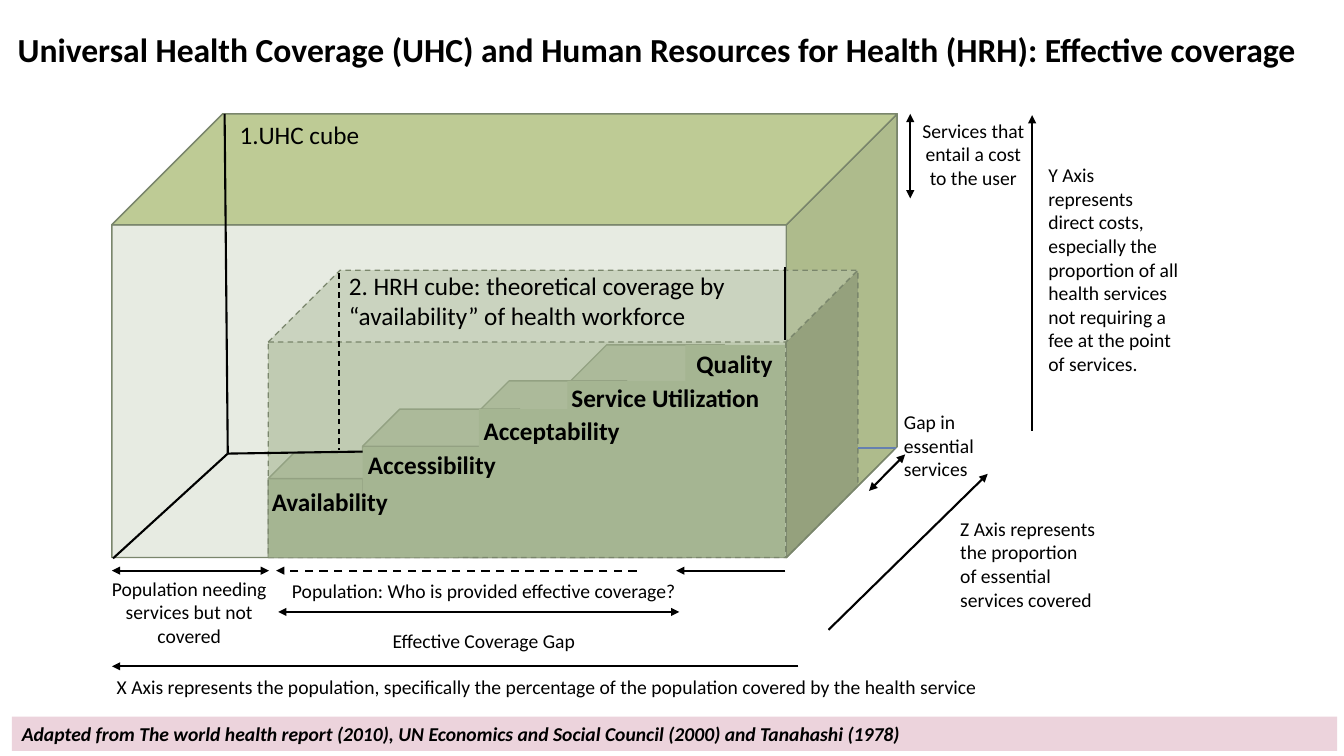
from dataclasses import dataclass

from lxml.etree import SubElement
from pptx import Presentation
from pptx.dml.color import RGBColor
from pptx.enum.dml import MSO_LINE_DASH_STYLE as DASH
from pptx.enum.shapes import MSO_CONNECTOR, MSO_SHAPE
from pptx.enum.text import MSO_ANCHOR, MSO_AUTO_SIZE, PP_ALIGN
from pptx.oxml.ns import qn
from pptx.util import Cm, Pt


@dataclass(frozen=True)
class Theme:
    font: str = "Calibri"
    title: int = 24
    label: int = 18
    note: int = 14
    ink: str = "000000"
    sage: str = "A5B592"
    lime: str = "BECB95"
    edge: str = "7A866C"
    floor: str = "6580B0"
    footer: str = "ECD3DC"


T = Theme()


def rgb(code):
    return RGBColor.from_string(code)


def write(tf, text, size, bold=False, italic=False, align=PP_ALIGN.LEFT):
    tf.text = text
    p = tf.paragraphs[0]
    p.alignment = align
    p.font.name, p.font.size = T.font, Pt(size)
    p.font.bold, p.font.italic = bold, italic
    p.font.color.rgb = rgb(T.ink)
    return p


def add_text(s, box, at, text, size=T.note, wrap=True, **style):
    """Place text at (left, top, width, height), measured from the box corner."""
    x, y, w, h = at
    tb = s.shapes.add_textbox(Cm(box[0] + x), Cm(box[1] + y), Cm(w), Cm(h))
    tb.text_frame.word_wrap = wrap
    write(tb.text_frame, text, size, **style)


def paint(sp, fill, edge=None, alpha=None, dash=None):
    sp.shadow.inherit = False
    sp.fill.solid()
    sp.fill.fore_color.rgb = rgb(fill)
    if alpha:
        color = sp.fill._xPr.find(qn("a:solidFill"))[0]
        SubElement(color, qn("a:alpha")).set("val", str(alpha * 1000))
    if edge:
        sp.line.color.rgb = rgb(edge)
        sp.line.width = Pt(1)
        sp.line.dash_style = dash
    else:
        sp.line.fill.background()


def add_block(s, box, kind, at, fill=T.sage, **look):
    x, y, w, h = at
    sp = s.shapes.add_shape(kind, Cm(box[0] + x), Cm(box[1] + y), Cm(w), Cm(h))
    paint(sp, fill, **look)
    return sp


def add_face(s, box, points):
    pts = [(Cm(box[0] + x), Cm(box[1] + y)) for x, y in points]
    fb = s.shapes.build_freeform(*pts[0])
    fb.add_line_segments(pts[1:], close=True)
    paint(fb.convert_to_shape(), T.lime, T.edge)


def add_line(s, box, start, end, heads="", color=T.ink, width=1.5, dash=None):
    """Draw a line; heads holds "<" for an arrowhead at start, ">" at end."""
    ends = [Cm(box[i % 2] + v) for i, v in enumerate((*start, *end))]
    ln = s.shapes.add_connector(MSO_CONNECTOR.STRAIGHT, *ends)
    ln.line.color.rgb = rgb(color)
    ln.line.width = Pt(width)
    ln.line.dash_style = dash
    xml = ln.line._get_or_add_ln()
    for mark, tag in (("<", "a:headEnd"), (">", "a:tailEnd")):
        if mark in heads:
            SubElement(xml, qn(tag)).set("type", "triangle")
    SubElement(ln._element.spPr, qn("a:effectLst"))


def title(s, box):
    sp = s.shapes.title
    sp.left, sp.top, sp.width, sp.height = (Cm(v) for v in box)
    tf = sp.text_frame
    tf.word_wrap, tf.auto_size = True, MSO_AUTO_SIZE.NONE
    tf.vertical_anchor = MSO_ANCHOR.MIDDLE
    p = write(tf, "Universal Health Coverage (UHC) and Human Resources for Health "
              "(HRH): Effective coverage", T.title, bold=True)
    p.line_spacing = 0.9


def coverage_cubes(s, box):
    """UHC cube holding the HRH cube and its staircase of coverage steps."""
    _, _, w, h = box
    d = h / 4
    cube, rect = MSO_SHAPE.CUBE, MSO_SHAPE.RECTANGLE

    add_face(s, box, [(w - d, d), (w - d, h), (w, h - d), (w, 0)])
    add_block(s, box, cube, (0, 0, w, h), edge=T.edge, alpha=26)
    for x, y, step_w in ((11.48, 5.82, 3.96), (9.02, 6.73, 3.96),
                         (6.32, 7.44, 3.96), (3.94, 8.53, 3.05)):
        add_block(s, box, cube, (x, y, step_w, h - y), edge=T.edge)

    def cover(x, y, cover_w):
        add_block(s, box, rect, (x, y, cover_w, h - y))

    for strip in ((14.45, 5.82, 2.51), (11.48, 6.73, 3.1), (9.25, 7.44, 2.41)):
        cover(*strip)
    add_block(s, box, cube, (3.94, 3.94, 14.86, h - 3.94), edge=T.edge,
              alpha=59, dash=DASH.DASH)
    for strip in ((6.32, 8.41, 2.41), (3.96, 9.8, 2.64)):
        cover(*strip)
    add_face(s, box, [(d, 0), (w, 0), (w - d, d), (0, d)])

    corner = (2.92, 8.56)
    add_line(s, box, (2.84, 0), corner)
    add_line(s, box, corner, (0.03, 11.2))
    add_line(s, box, corner, (6.32, 8.51))
    add_line(s, box, (18.8, 8.41), (19.76, 8.41), color=T.floor)
    add_line(s, box, (16.97, 3.86), (16.97, 5.69))
    add_line(s, box, (5.72, 4.01), (5.72, 8.48), width=1, dash=DASH.DASH)

    add_text(s, box, (2.97, 0, 3.58, 1.02), "1.UHC cube", T.label, wrap=False)
    add_text(s, box, (5.72, 3.81, 10.54, 1.8), "2. HRH cube: theoretical coverage "
             "by “availability” of health workforce", T.label)
    for text, x, y, text_w in (("Quality", 14.48, 5.79, 2.44),
                               ("Service Utilization", 11.33, 6.65, 5.28),
                               ("Acceptability", 9.12, 7.47, 3.96),
                               ("Accessibility", 6.2, 8.33, 3.76),
                               ("Availability", 3.78, 9.27, 3.45)):
        add_text(s, box, (x, y, text_w, 1.02), text, T.label, wrap=False, bold=True)


def x_axis(s, box):
    w, h = box[2:]
    add_line(s, box, (0, 0), (3.96, 0), "<>")
    add_line(s, box, (4.19, 1.04), (14.3, 1.04), "<>")
    add_line(s, box, (13.23, 0), (4.14, 0), ">", dash=DASH.DASH)
    add_line(s, box, (16.97, 0), (14.22, 0), ">")
    add_line(s, box, (w, h), (0, h), ">")
    for text, at in (
            ("Population needing services but not covered", (-0.36, 0.03, 4.62, 2.06)),
            ("Population: Who is provided effective coverage?", (3.51, 0.08, 11.73, 0.86)),
            ("Effective Coverage Gap", (3.51, 1.35, 11.73, 0.86)),
            ("X Axis represents the population, specifically the percentage of the "
             "population covered by the health service", (-0.79, 2.51, 23.52, 0.86))):
        add_text(s, box, at, text, align=PP_ALIGN.CENTER)


def y_axis(s, box):
    h = box[3]
    add_line(s, box, (0, 0), (0, 2.13), "<>")
    add_line(s, box, (3.07, h), (3.07, 0.03), ">")
    add_text(s, box, (-0.05, 0, 3.28, 2.06), "Services that entail a cost to the user",
             align=PP_ALIGN.CENTER)
    add_text(s, box, (3.23, 1.12, 3.91, 5.64), "Y Axis represents direct costs, "
             "especially the proportion of all health services not requiring a fee "
             "at the point of services.")


def z_axis(s, box):
    h = box[3]
    add_line(s, box, (0, h), (4.01, 1.73), ">")
    add_line(s, box, (1.02, 2.16), (1.93, 1.24), "<>")
    add_text(s, box, (1.65, 0, 3.28, 2.06), "Gap in essential services")
    add_text(s, box, (3.07, 2.69, 3.91, 2.64),
             "Z Axis represents the proportion of essential services covered")


def source_bar(s, box):
    sp = add_block(s, box, MSO_SHAPE.RECTANGLE, (0, 0, *box[2:]), T.footer)
    sp.text_frame.word_wrap = True
    write(sp.text_frame, "Adapted from The world health report (2010), UN Economics and "
          "Social Council (2000) and Tanahashi (1978)", T.note, bold=True, italic=True)


def main():
    prs = Presentation()
    prs.slide_width, prs.slide_height = Cm(33.87), Cm(19.05)
    s = prs.slides.add_slide(prs.slide_layouts[5])
    title(s, (0.19, 0.05, 33.68, 2.49))
    coverage_cubes(s, (2.82, 2.87, 19.79, 11.18))
    x_axis(s, (2.82, 14.38, 17.3, 2.41))
    y_axis(s, (22.94, 2.87, 7.14, 7.98))
    z_axis(s, (20.88, 10.21, 6.98, 5.66))
    source_bar(s, (0.3, 18.06, 33.4, 0.86))
    prs.save("out.pptx")


if __name__ == "__main__":
    main()
